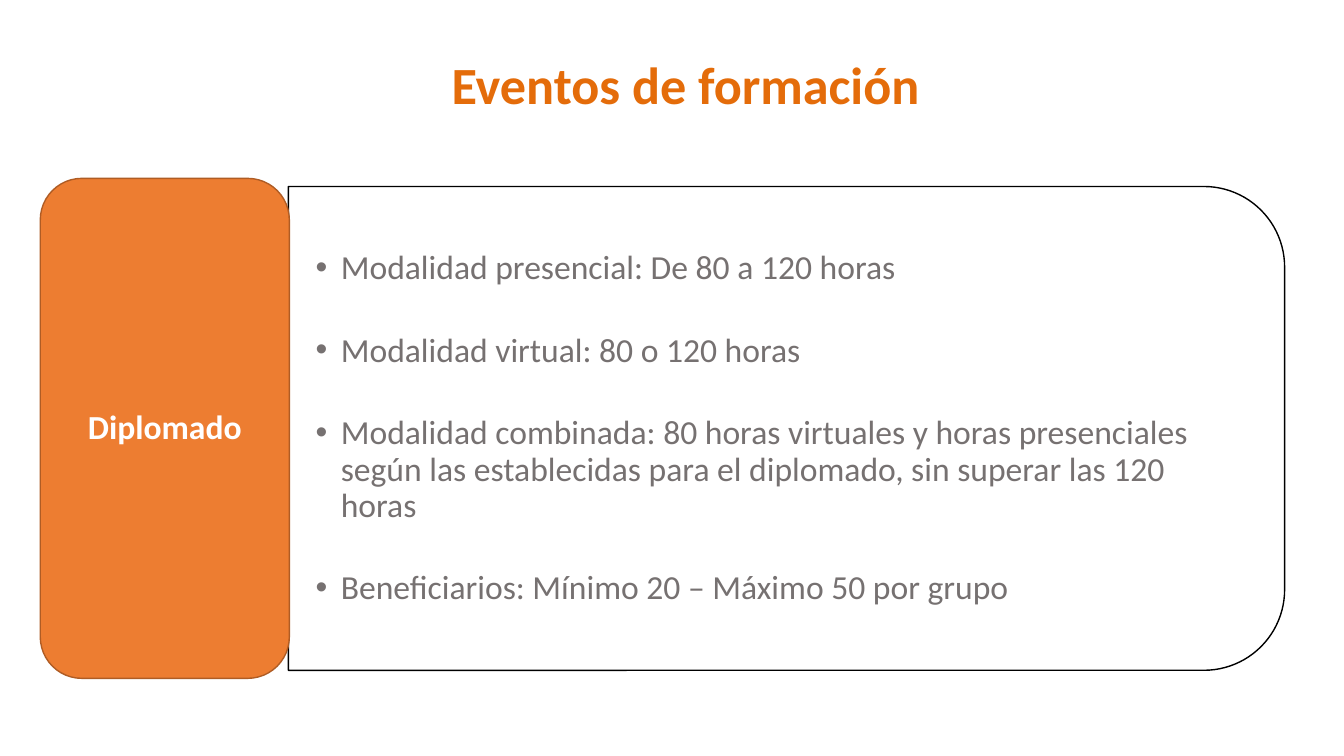
from dataclasses import dataclass

from lxml.etree import SubElement as Sub
from pptx import Presentation
from pptx.dml.color import RGBColor as Rgb
from pptx.enum.shapes import MSO_SHAPE as Kind
from pptx.enum.text import MSO_ANCHOR as Anchor, PP_ALIGN as Align
from pptx.oxml.ns import qn
from pptx.slide import Slide
from pptx.util import Inches, Pt

WIDE, HIGH = Inches(13.33), Inches(7.5)
WHITE = Rgb(0xFF, 0xFF, 0xFF)
BLACK = Rgb(0x00, 0x00, 0x00)
GRAY = Rgb(0x76, 0x71, 0x71)
AMBER = Rgb(0xE4, 0x6C, 0x0A)
ORANGE = Rgb(0xED, 0x7D, 0x31)
RUST = Rgb(0xAF, 0x5C, 0x24)
FACE = "Calibri"
HANG = Inches(0.25)


@dataclass(frozen=True)
class Box:
    left: float
    top: float
    wide: float
    high: float

    def span(self) -> tuple[int, int, int, int]:
        return (int(WIDE * self.left / 100), int(HIGH * self.top / 100),
                int(WIDE * self.wide / 100), int(HIGH * self.high / 100))


@dataclass(frozen=True)
class Card:
    kind: Kind
    box: Box
    fill: Rgb
    line: Rgb
    turned: bool = False


@dataclass(frozen=True)
class Text:
    box: Box
    lines: tuple[str, ...]
    size: float
    color: Rgb
    bold: bool = False
    wrap: bool = True
    anchor: Anchor = Anchor.MIDDLE
    align: Align = Align.LEFT
    inset: tuple[float, float] = (0.1, 0.05)
    spacing: float = 0.9
    gap: float = 0
    bullet: bool = False


CARDS = (
    Card(Kind.ROUND_2_SAME_RECTANGLE, Box(21.46, 24.67, 74.12, 64), WHITE, BLACK, True),
    Card(Kind.ROUNDED_RECTANGLE, Box(3, 23.6, 18.53, 66.13), ORANGE, RUST),
)

TEXTS = (
    Text(Box(32.86, 6.27, 36.68, 9.73), ("Eventos de formación",), 37.3, AMBER,
         bold=True, wrap=False, anchor=Anchor.TOP, spacing=1),
    Text(Box(21.46, 27.87, 72.32, 57.73), (
        "Modalidad presencial: De 80 a 120 horas",
        "Modalidad virtual: 80 o 120 horas",
        "Modalidad combinada: 80 horas virtuales y horas presenciales según las "
        "establecidas para el diplomado, sin superar las 120 horas",
        "Beneficiarios: Mínimo 20 – Máximo 50 por grupo",
    ), 24, GRAY, inset=(0.27, 0.14), gap=33, bullet=True),
    Text(Box(3.9, 25.2, 16.73, 62.93), ("Diplomado",), 24, WHITE,
         bold=True, align=Align.CENTER),
)


def draw_card(slide: Slide, card: Card) -> None:
    left, top, wide, high = card.box.span()
    if card.turned:
        left, top = left + (wide - high) // 2, top + (high - wide) // 2
        wide, high = high, wide
    shape = slide.shapes.add_shape(card.kind, left, top, wide, high)
    shape.rotation = 90 if card.turned else 0
    shape.shadow.inherit = False
    shape.fill.solid()
    shape.fill.fore_color.rgb = card.fill
    shape.line.color.rgb = card.line
    shape.line.width = Pt(1)


def draw_text(slide: Slide, text: Text) -> None:
    frame = slide.shapes.add_textbox(*text.box.span()).text_frame
    frame.word_wrap = text.wrap
    frame.vertical_anchor = text.anchor
    side, edge = map(Inches, text.inset)
    frame.margin_left = frame.margin_right = side
    frame.margin_top = frame.margin_bottom = edge
    frame.text = "\n".join(text.lines)
    for rank, para in enumerate(frame.paragraphs):
        para.alignment = text.align
        para.line_spacing = text.spacing
        if rank:
            para.space_before = Pt(text.gap)
        if text.bullet:
            props = para._p.get_or_add_pPr()
            props.set("marL", str(HANG))
            props.set("indent", str(-HANG))
            Sub(props, qn("a:buFont"), typeface="Arial")
            Sub(props, qn("a:buChar"), char="•")
        for run in para.runs:
            run.font.name = FACE
            run.font.size = Pt(text.size)
            run.font.bold = text.bold
            run.font.color.rgb = text.color


def main() -> None:
    deck = Presentation()
    deck.slide_width, deck.slide_height = WIDE, HIGH
    slide = deck.slides.add_slide(deck.slide_layouts[6])
    for card in CARDS:
        draw_card(slide, card)
    for text in TEXTS:
        draw_text(slide, text)
    deck.save("out.pptx")


if __name__ == "__main__":
    main()
